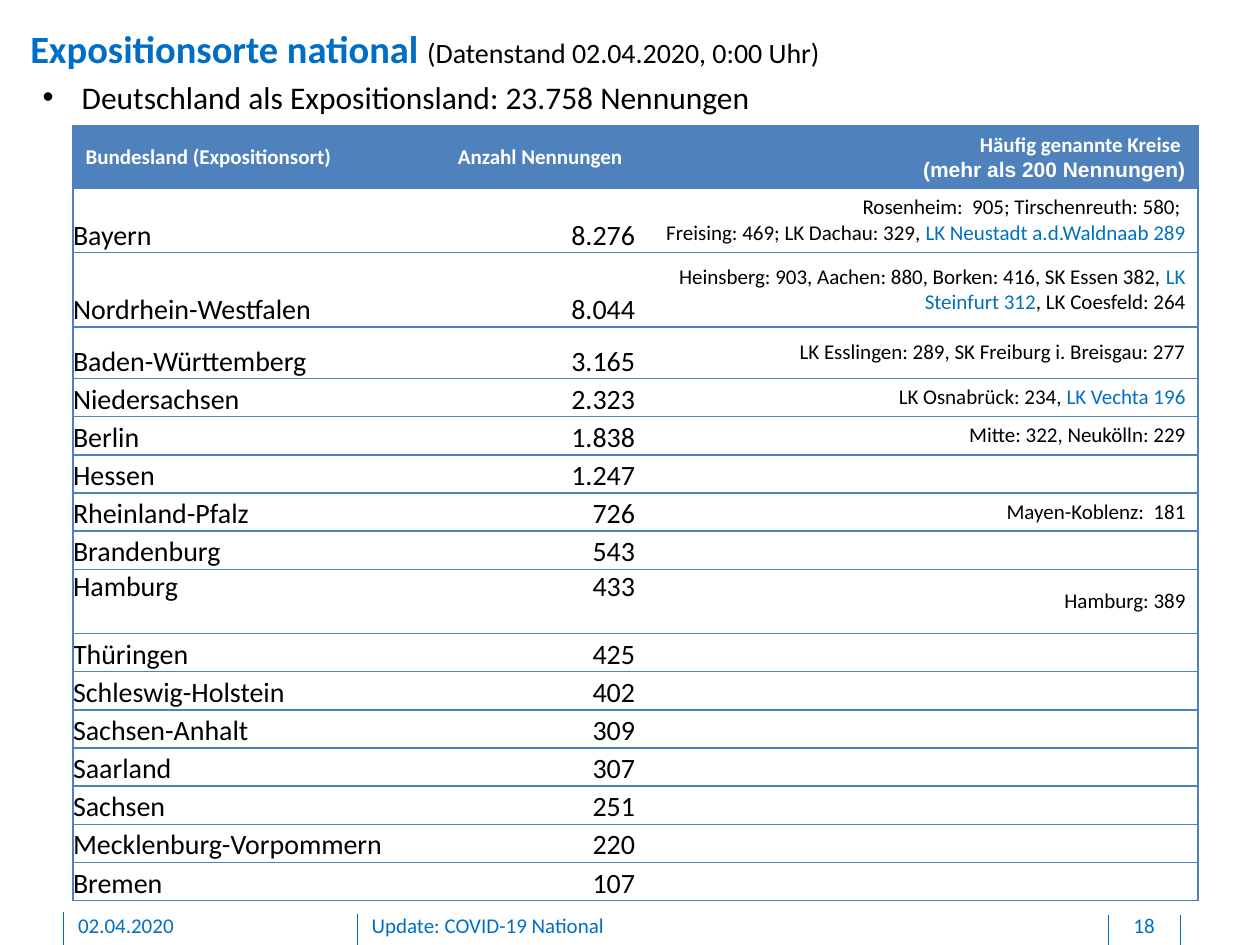
from lxml import etree
from pptx import Presentation
from pptx import util as u
from pptx.dml.color import RGBColor
from pptx.enum import shapes, text
from pptx.oxml.ns import qn

COLOURS = {"brand": "006EC7", "new": "0070C0", "grid": "4F81BD",
           "ink": "000000", "paper": "FFFFFF"}

deck = Presentation()
deck.slide_width, deck.slide_height = u.Inches(10), u.Inches(7.5)
COL = deck.slide_width / 100
ROW = deck.slide_height / 75
page = deck.slides.add_slide(deck.slide_layouts[6])


def write(para, spans, size, align=text.PP_ALIGN.LEFT):
    """Add (text, colour, bold) spans; a span may end with its own size and font."""
    para.alignment = align
    for words, colour, bold, *special in spans:
        span = para.add_run()
        span.text = words
        span.font.size, span.font.name = u.Pt(size), "Calibri"
        span.font.bold = bold
        span.font.color.rgb = RGBColor.from_string(COLOURS[colour])
        if special:
            span.font.size, span.font.name = u.Pt(special[0]), special[1]


def add_text(left, top, width, height, spans, size, margins=(0, 0, 0, 0),
             align=text.PP_ALIGN.LEFT):
    """Place a text box on the grid and return its paragraph."""
    box = page.shapes.add_textbox(int(left * COL), int(top * ROW),
                                  int(width * COL), int(height * ROW))
    frame = box.text_frame
    frame.word_wrap = True
    (frame.margin_left, frame.margin_top,
     frame.margin_right, frame.margin_bottom) = [u.Inches(m) for m in margins]
    write(frame.paragraphs[0], spans, size, align)
    return frame.paragraphs[0]


# Footer
for x, top in ((28.4, 72.5), (5, 72.4), (93.7, 72.6), (88, 72.6)):
    rule = page.shapes.add_connector(shapes.MSO_CONNECTOR.STRAIGHT, int(x * COL),
                                     int(top * ROW), int(x * COL), deck.slide_height)
    rule.line.color.rgb = RGBColor.from_string(COLOURS["brand"])
    rule.line.width = u.Pt(0.5)
    etree.SubElement(rule._element.spPr, qn("a:effectLst"))

for left, width, words, align in (
        (6.2, 20.3, "02.04.2020", text.PP_ALIGN.LEFT),
        (29.5, 56.7, "Update: COVID-19 National", text.PP_ALIGN.LEFT),
        (88.1, 5.4, "18", text.PP_ALIGN.CENTER)):
    add_text(left, 72.4, width, 2.1, [(words, "brand", False)], 12,
             (0, 0, 0, 0.05), align)

# Heading
add_text(2.4, 2, 88.5, 3.7,
         [("Expositionsorte national ", "brand", True),
          ("(Datenstand 02.04.2020, 0:00 Uhr)", "ink", False, 16, "Calibri")], 22)
summary = add_text(2.4, 5.7, 58.9, 4,
                   [("Deutschland als Expositionsland: 23.758 Nennungen", "ink", False)],
                   18, (0.1, 0.05, 0.1, 0.05))
props = summary._p.get_or_add_pPr()
props.set("marL", str(u.Inches(0.31)))
props.set("indent", str(-u.Inches(0.31)))
etree.SubElement(props, qn("a:buFont"), typeface="Arial")
etree.SubElement(props, qn("a:buChar"), char="•")

# Table: state, mentions, districts (text between bars is newly added)
HEADER = ("Bundesland (Expositionsort)", "Anzahl Nennungen",
          "Häufig genannte Kreise \n(mehr als 200 Nennungen)")
STATES = [
    ("Bayern", "8.276", "Rosenheim:  905; Tirschenreuth: 580; \n"
     "Freising: 469; LK Dachau: 329, |LK Neustadt a.d.Waldnaab 289|"),
    ("Nordrhein-Westfalen", "8.044",
     "Heinsberg: 903, Aachen: 880, Borken: 416, SK Essen 382, "
     "|LK Steinfurt 312|, LK Coesfeld: 264"),
    ("Baden-Württemberg", "3.165", "LK Esslingen: 289, SK Freiburg i. Breisgau: 277"),
    ("Niedersachsen", "2.323", "LK Osnabrück: 234, |LK Vechta 196|"),
    ("Berlin", "1.838", "Mitte: 322, Neukölln: 229"),
    ("Hessen", "1.247", ""),
    ("Rheinland-Pfalz", "726", "Mayen-Koblenz:  181"),
    ("Brandenburg", "543", ""),
    ("Hamburg", "433", "Hamburg: 389"),
    ("Thüringen", "425", ""),
    ("Schleswig-Holstein", "402", ""),
    ("Sachsen-Anhalt", "309", ""),
    ("Saarland", "307", ""),
    ("Sachsen", "251", ""),
    ("Mecklenburg-Vorpommern", "220", ""),
    ("Bremen", "107", ""),
]
WIDTHS = (25.6, 19, 44.7)
HEIGHTS = {0: 4.9, 1: 5.1, 2: 5.9, 3: 4.1, 9: 5.1}
ROW_HEIGHT = 3.03

table = page.shapes.add_table(len(STATES) + 1, len(WIDTHS), int(5.8 * COL),
                              int(9.95 * ROW), int(sum(WIDTHS) * COL),
                              int(61 * ROW)).table
for column, width in zip(table.columns, WIDTHS):
    column.width = int(width * COL)

for r, entry in enumerate([HEADER] + STATES):
    table.rows[r].height = int(HEIGHTS.get(r, ROW_HEIGHT) * ROW)
    for c, words in enumerate(entry):
        cell = table.cell(r, c)
        edges = {"lnL": c == 0, "lnR": c == 2, "lnT": True, "lnB": True}
        for edge, drawn in edges.items():
            line = etree.SubElement(cell._tc.get_or_add_tcPr(), qn("a:" + edge),
                                    w=str(u.Pt(1)))
            paint = etree.SubElement(line, qn("a:solidFill" if drawn else "a:noFill"))
            if drawn:
                etree.SubElement(paint, qn("a:srgbClr"), val=COLOURS["grid"])
        cell.fill.solid()
        cell.fill.fore_color.rgb = RGBColor.from_string(
            COLOURS["paper" if r else "grid"])

        cell.vertical_anchor = text.MSO_ANCHOR.MIDDLE
        figures = r > 0 and c < 2
        if figures:
            cell.margin_left = cell.margin_right = 0
            cell.margin_top = cell.margin_bottom = 0
            cell.vertical_anchor = (text.MSO_ANCHOR.TOP if entry[0] == "Hamburg"
                                    else text.MSO_ANCHOR.BOTTOM)
        if not words:
            cell.text_frame.paragraphs[0]._p.get_or_add_endParaRPr().set("sz", "1200")
            continue
        for i, row_text in enumerate(words.split("\n")):
            para = (cell.text_frame.add_paragraph() if i
                    else cell.text_frame.paragraphs[0])
            special = (12, "Arial") if r == 0 and i == 1 else ()
            spans = [(part, "paper" if r == 0 else "new" if n % 2 else "ink",
                      r == 0, *special)
                     for n, part in enumerate(row_text.split("|")) if part]
            write(para, spans, 16 if figures else 12,
                  text.PP_ALIGN.RIGHT if c else text.PP_ALIGN.LEFT)

deck.save("out.pptx")
